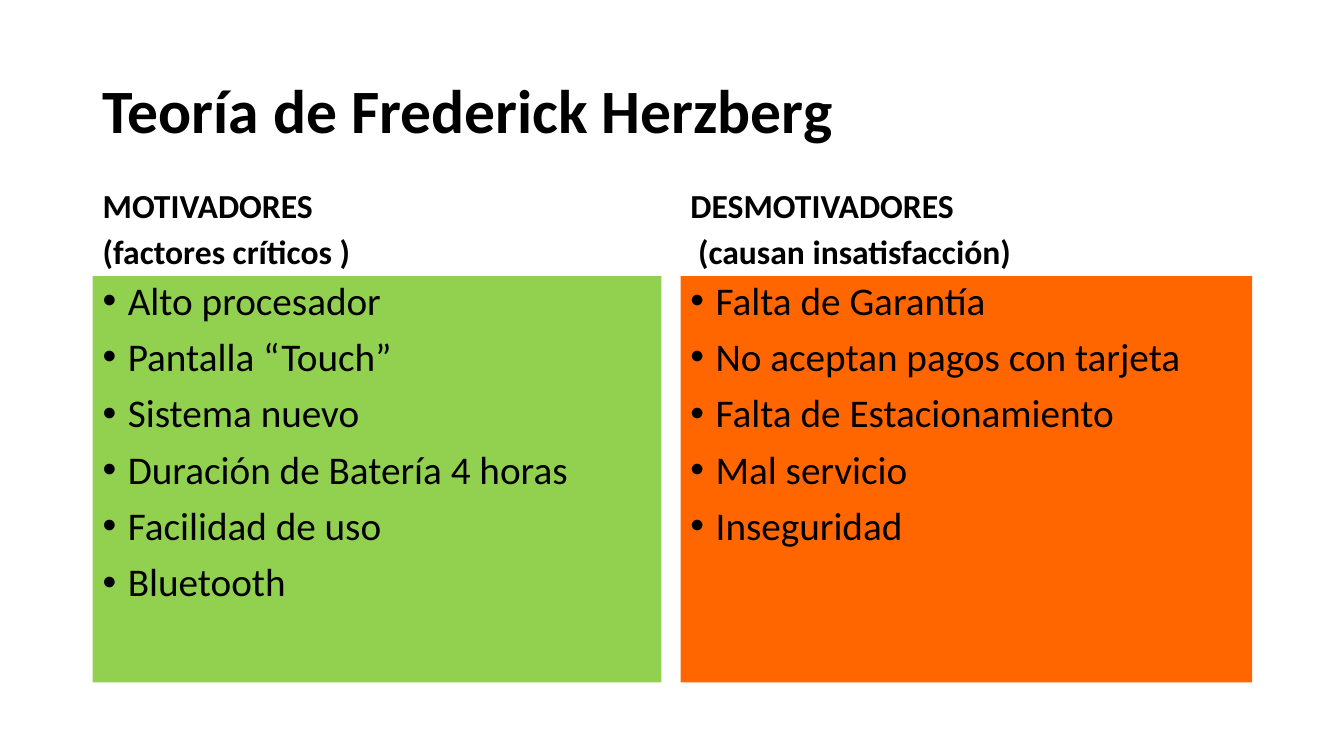
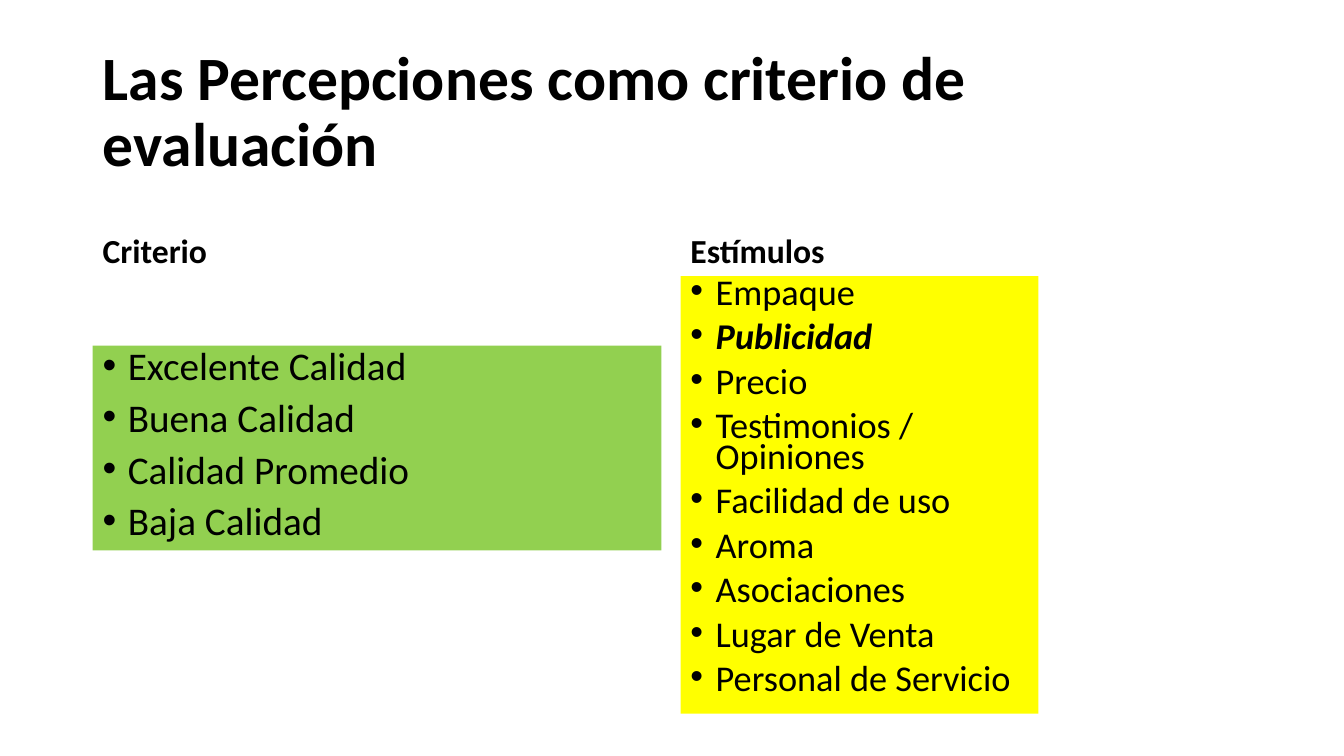
from pptx import Presentation
from pptx.dml.color import RGBColor
from pptx.enum.shapes import MSO_SHAPE as SHAPE
from pptx.enum.text import MSO_ANCHOR as ANCHOR, PP_ALIGN as ALIGN
from pptx.util import Pt
from lxml.etree import SubElement
from pptx.oxml.ns import qn

PX = 9144
FONT = "Calibri"
BLACK = RGBColor(0x00, 0x00, 0x00)
GREEN = RGBColor(0x92, 0xD0, 0x50)
ORANGE = RGBColor(0xFF, 0x66, 0x00)
YELLOW = RGBColor(0xFF, 0xFF, 0x00)
LEFT, RIGHT = 92, 675
HEAD_TOP, HEAD_H = 184, 90
INDENT = 25


def add_block(slide, box, lines, size, spacing, anchor, fill=None, bold=False, emphasis=()):
    x, y, w, h = (n * PX for n in box)
    if fill is None:
        sp = slide.shapes.add_textbox(x, y, w, h)
    else:
        sp = slide.shapes.add_shape(SHAPE.RECTANGLE, x, y, w, h)
        sp.shadow.inherit = False
        sp.fill.solid()
        sp.fill.fore_color.rgb = fill
        sp.line.fill.background()
    tf = sp.text_frame
    tf.word_wrap = True
    tf.vertical_anchor = anchor
    for i, line in enumerate(lines):
        p = tf.paragraphs[0] if i == 0 else tf.add_paragraph()
        p.alignment = ALIGN.LEFT
        p.line_spacing = spacing
        p.space_before = Pt(10 if size < 44 else 0)
        if fill is not None:
            pPr = p._p.get_or_add_pPr()
            pPr.set("marL", str(INDENT * PX))
            pPr.set("indent", str(-INDENT * PX))
            SubElement(pPr, qn("a:buFont"), typeface="Arial")
            SubElement(pPr, qn("a:buChar"), char="•")
        r = p.add_run()
        r.text = line
        r.font.name = FONT
        r.font.size = Pt(size)
        r.font.color.rgb = BLACK
        r.font.bold = bold or line in emphasis
        r.font.italic = line in emphasis


SLIDES = [
    ("Teoría de Frederick Herzberg", 0.8, [
        (LEFT, 564, ["MOTIVADORES", "(factores críticos )"],
         (274, 564, 403), GREEN, 28, 0.9,
         ["Alto procesador", "Pantalla “Touch”", "Sistema nuevo",
          "Duración de Batería 4 horas", "Facilidad de uso", "Bluetooth"]),
        (RIGHT, 567, ["DESMOTIVADORES", " (causan insatisfacción)"],
         (274, 567, 403), ORANGE, 28, 0.9,
         ["Falta de Garantía", "No aceptan pagos con tarjeta",
          "Falta de Estacionamiento", "Mal servicio", "Inseguridad"]),
    ]),
    ("Las Percepciones como criterio de evaluación", 0.9, [
        (LEFT, 564, ["Criterio"],
         (343, 564, 203), GREEN, 28, 0.8,
         ["Excelente Calidad", "Buena Calidad", "Calidad Promedio", "Baja Calidad"]),
        (RIGHT, 567, ["Estímulos"],
         (274, 355, 434), YELLOW, 25.9, 0.7,
         ["Empaque", "Publicidad", "Precio", "Testimonios / Opiniones",
          "Facilidad de uso", "Aroma", "Asociaciones", "Lugar de Venta",
          "Personal de Servicio"]),
    ]),
]

prs = Presentation()
prs.slide_width = 1333 * PX
prs.slide_height = 750 * PX

for title, head_spacing, columns in SLIDES:
    s = prs.slides.add_slide(prs.slide_layouts[6])
    add_block(s, (LEFT, 40, 1150, 145), [title], 44, 0.9, ANCHOR.MIDDLE, bold=True)
    for x, head_w, heading, (y, w, h), fill, size, spacing, items in columns:
        add_block(s, (x, HEAD_TOP, head_w, HEAD_H), heading, 24, head_spacing,
                  ANCHOR.BOTTOM, bold=True)
        add_block(s, (x, y, w, h), items, size, spacing, ANCHOR.TOP, fill,
                  emphasis=("Publicidad",))

prs.save("out.pptx")
